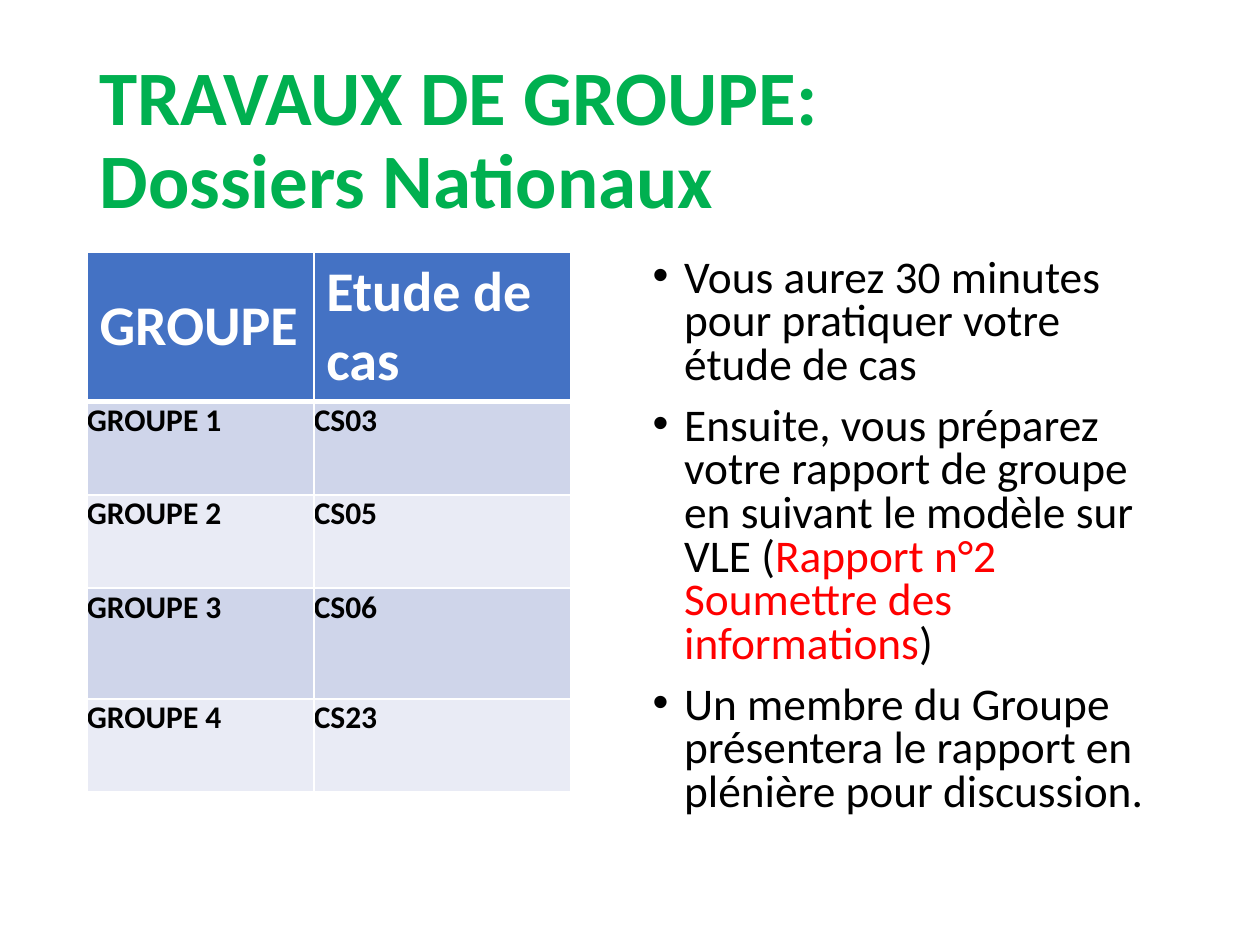
from dataclasses import dataclass

from lxml.etree import SubElement
from pptx import Presentation
from pptx.dml.color import RGBColor
from pptx.enum.text import MSO_ANCHOR as Anchor, MSO_AUTO_SIZE as AutoSize, PP_ALIGN as Align
from pptx.oxml import parse_xml
from pptx.oxml.ns import nsdecls, qn
from pptx.util import Inches, Pt

FONT = "Calibri"
GREEN, BLUE, RED, BLACK, WHITE = "00B050", "4472C4", "FF0000", "000000", "FFFFFF"
BANDS = ("CFD5EA", "E9EBF5")


@dataclass
class Area:
    """A region in percent of the slide's width and height."""
    x: float
    y: float
    w: float
    h: float

    def box(self, prs) -> tuple[int, int, int, int]:
        sw, sh = prs.slide_width, prs.slide_height
        return tuple(int(share * size / 100) for share, size in
                     ((self.x, sw), (self.y, sh), (self.w, sw), (self.h, sh)))


@dataclass
class Row:
    cells: tuple[str, str]
    height: float
    fill: str
    header: bool = False


TITLE = Area(6.9, 5.33, 70.9, 19.33)
TABLE = Area(6.9, 26.67, 38.4, 51.07)
BODY = Area(50.8, 26.67, 42.3, 63.47)
COLUMNS = (1.8, 2.04)

CASES = ("CS03", "CS05", "CS06", "CS23")
HEIGHTS = (0.74, 0.74, 0.88, 0.74)
ROWS = [Row(("GROUPE", "Etude de cas"), 0.74, BLUE, header=True)] + [
    Row((f"GROUPE {i + 1}", case), height, BANDS[i % 2])
    for i, (case, height) in enumerate(zip(CASES, HEIGHTS))]

BULLETS = (
    (("Vous aurez 30 minutes pour pratiquer votre étude de cas", BLACK),),
    (("Ensuite, vous préparez votre rapport de groupe en suivant le modèle sur VLE (", BLACK),
     ("Rapport n°2 Soumettre des informations", RED), (")", BLACK)),
    (("Un membre du Groupe présentera le rapport en plénière pour discussion.", BLACK),),
)


def rgb(color: str) -> RGBColor:
    return RGBColor.from_string(color)


def add_text(p, text: str, *, size: float, color: str, bold: bool = False) -> None:
    for i, line in enumerate(text.split("\n")):
        if i:
            p.add_line_break()
        r = p.add_run()
        r.text = line
        r.font.name, r.font.size, r.font.bold = FONT, Pt(size), bold
        r.font.color.rgb = rgb(color)


def place(sp, area: Area, prs, anchor):
    sp.left, sp.top, sp.width, sp.height = area.box(prs)
    tf = sp.text_frame
    tf.word_wrap, tf.auto_size, tf.vertical_anchor = True, AutoSize.NONE, anchor
    return tf


def set_bullet(p, indent: float) -> None:
    pPr = p._p.get_or_add_pPr()
    pPr.set("marL", str(Inches(indent)))
    pPr.set("indent", str(-Inches(indent)))
    SubElement(pPr, qn("a:buFont")).set("typeface", "Arial")
    SubElement(pPr, qn("a:buChar")).set("char", "•")


def set_borders(cell, bottom: float, top: float) -> None:
    tcPr = cell._tc.get_or_add_tcPr()
    for i, (side, width) in enumerate((("L", 1), ("R", 1), ("T", top), ("B", bottom))):
        tcPr.insert(i, parse_xml(
            f'<a:ln{side} {nsdecls("a")} w="{Pt(width)}"><a:solidFill>'
            f'<a:srgbClr val="{WHITE}"/></a:solidFill></a:ln{side}>'))


def add_group_table(s, prs) -> None:
    table = s.shapes.add_table(len(ROWS), len(COLUMNS), *TABLE.box(prs)).table
    for column, width in zip(table.columns, COLUMNS):
        column.width = Inches(width)
    for i, row in enumerate(ROWS):
        table.rows[i].height = Inches(row.height)
        for j, text in enumerate(row.cells):
            cell = table.cell(i, j)
            cell.fill.solid()
            cell.fill.fore_color.rgb = rgb(row.fill)
            set_borders(cell, bottom=3 if row.header else 1, top=3 if i == 1 else 1)
            if row.header:
                cell.vertical_anchor = Anchor.MIDDLE
            else:
                cell.margin_left = cell.margin_right = cell.margin_top = cell.margin_bottom = 0
            add_text(cell.text_frame.paragraphs[0], text, size=32 if row.header else 18,
                     color=WHITE if row.header else BLACK, bold=True)


def main() -> None:
    prs = Presentation()
    prs.slide_width, prs.slide_height = Inches(10), Inches(7.5)
    s = prs.slides.add_slide(prs.slide_layouts[1])

    # Title
    p = place(s.shapes.title, TITLE, prs, Anchor.MIDDLE).paragraphs[0]
    p.alignment, p.line_spacing = Align.LEFT, 0.9
    add_text(p, "TRAVAUX DE GROUPE:\nDossiers Nationaux", size=44, color=GREEN, bold=True)

    # Groups and their case studies
    add_group_table(s, prs)

    # Instructions
    tf = place(s.placeholders[1], BODY, prs, Anchor.TOP)
    for i, parts in enumerate(BULLETS):
        p = tf.add_paragraph() if i else tf.paragraphs[0]
        set_bullet(p, 0.25)
        p.line_spacing, p.space_before = 0.8, Pt(10 if i else 0)
        for text, color in parts:
            add_text(p, text, size=25.9, color=color)

    prs.save("out.pptx")


if __name__ == "__main__":
    main()
